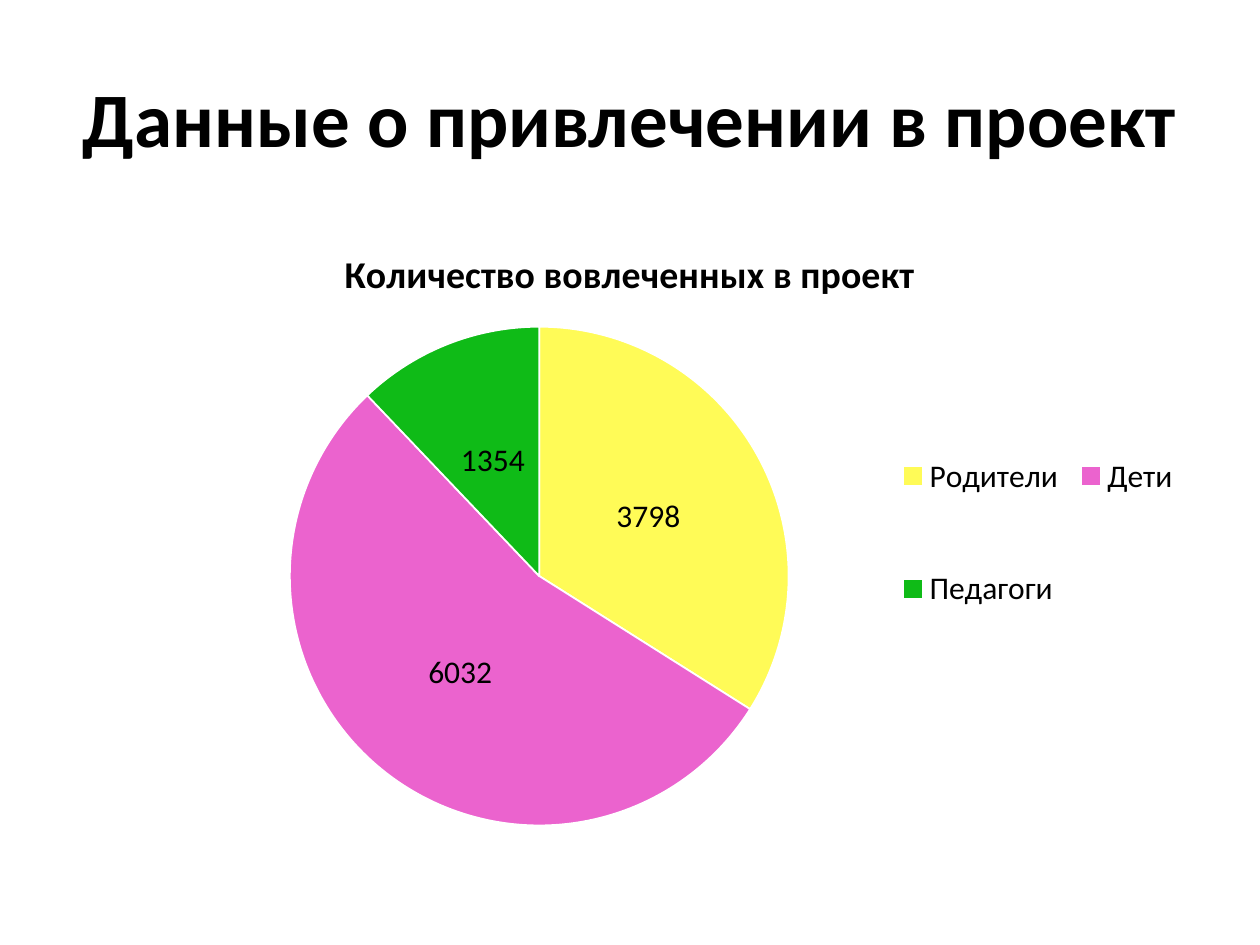
import pptx
import pptx.chart.data
import pptx.dml.color
import pptx.enum.chart
import pptx.enum.text
import pptx.oxml
import pptx.oxml.ns
import pptx.util

Cm = pptx.util.Cm
COLORS = {
    "text": "000000",
    "border": "FFFFFF",
    "Родители": "FFFB57",
    "Дети": "EB63CE",
    "Педагоги": "0FBB17",
}
COUNTS = {"Родители": 3798, "Дети": 6032, "Педагоги": 1354}
CHART_TITLE = "Количество вовлеченных в проект"
LEFT, WIDTH = Cm(1.27), Cm(22.86)


def set_font(font, size, bold):
    values = {"name": "Calibri", "size": pptx.util.Pt(size), "bold": bold}
    for name, value in values.items():
        setattr(font, name, value)
    font.color.rgb = pptx.dml.color.RGBColor.from_string(COLORS["text"])


def make_layout(x, y, w, h, inner=False):
    target = '<c:layoutTarget val="inner"/>' if inner else ""
    sizes = "".join(f'<c:{key} val="{value}"/>' for key, value in zip("xywh", (x, y, w, h)))
    return pptx.oxml.parse_xml(
        f'<c:layout {pptx.oxml.ns.nsdecls("c")}><c:manualLayout>{target}'
        f'<c:xMode val="edge"/><c:yMode val="edge"/>{sizes}</c:manualLayout></c:layout>'
    )


presentation = pptx.Presentation()
presentation.slide_width = Cm(25.4)
presentation.slide_height = Cm(19.05)
slide = presentation.slides.add_slide(presentation.slide_layouts[6])

# Slide title
title_box = slide.shapes.add_textbox(LEFT, Cm(0.76), WIDTH, Cm(3.18))
frame_format = {"word_wrap": True, "vertical_anchor": pptx.enum.text.MSO_ANCHOR.MIDDLE}
for name, value in frame_format.items():
    setattr(title_box.text_frame, name, value)
paragraph = title_box.text_frame.paragraphs[0]
paragraph.alignment = pptx.enum.text.PP_ALIGN.CENTER
run = paragraph.add_run()
run.text = "Данные о привлечении в проект"
set_font(run.font, 44, True)

# Pie chart
chart_data = pptx.chart.data.CategoryChartData()
chart_data.categories = list(COUNTS)
chart_data.add_series(CHART_TITLE, list(COUNTS.values()))
chart = slide.shapes.add_chart(
    pptx.enum.chart.XL_CHART_TYPE.PIE, LEFT, Cm(4.45), WIDTH, Cm(12.57), chart_data
).chart
set_font(chart.font, 18, False)

# Chart title
chart.has_title = True
chart_title = chart.chart_title
chart_title.include_in_layout = False
chart_title.text_frame.text = CHART_TITLE
set_font(chart_title.text_frame.paragraphs[0].runs[0].font, 21.6, True)

# Slices and their values
plot = chart.plots[0]
plot.vary_by_categories = True
for index, category in enumerate(COUNTS):
    slice_format = plot.series[0].points[index].format
    slice_format.fill.solid()
    slice_format.fill.fore_color.rgb = pptx.dml.color.RGBColor.from_string(COLORS[category])
    slice_format.line.color.rgb = pptx.dml.color.RGBColor.from_string(COLORS["border"])
    slice_format.line.width = pptx.util.Pt(1)
plot.has_data_labels = True
label_format = {
    "show_value": True,
    "show_percentage": False,
    "position": pptx.enum.chart.XL_LABEL_POSITION.CENTER,
}
for name, value in label_format.items():
    setattr(plot.data_labels, name, value)
set_font(plot.data_labels.font, 18, False)

# Legend
chart.has_legend = True
legend_format = {
    "position": pptx.enum.chart.XL_LEGEND_POSITION.RIGHT,
    "include_in_layout": False,
}
for name, value in legend_format.items():
    setattr(chart.legend, name, value)
set_font(chart.legend.font, 18, False)

# Fixed places of the pie and the legend, as shares of the chart
plot_area = plot._element.getparent()
for old_layout in plot_area.findall(pptx.oxml.ns.qn("c:layout")):
    plot_area.remove(old_layout)
plot_area.insert(0, make_layout(0.2, 0.17, 0.44, 0.8, inner=True))
legend_element = chart.legend._element
for old_layout in legend_element.findall(pptx.oxml.ns.qn("c:layout")):
    legend_element.remove(old_layout)
legend_element.find(pptx.oxml.ns.qn("c:legendPos")).addnext(make_layout(0.73, 0.26, 0.26, 0.48))

presentation.save("out.pptx")
